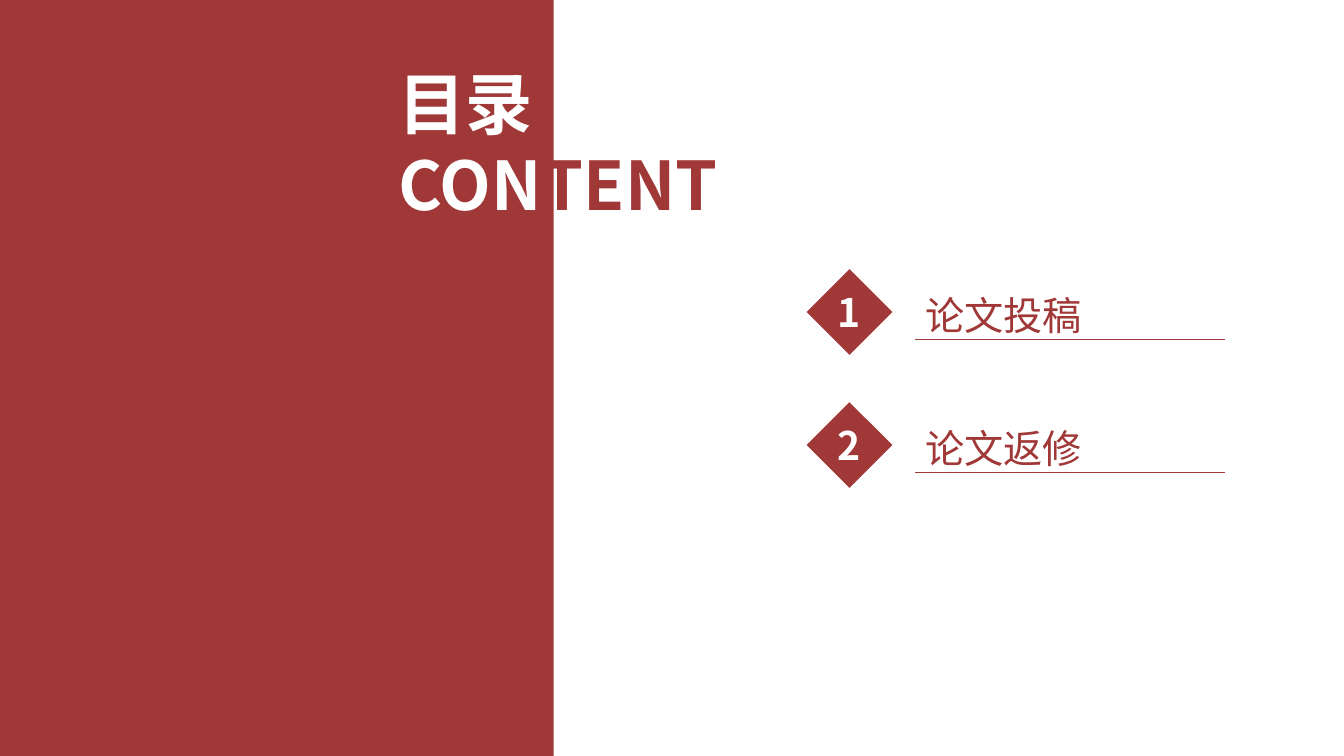
from lxml.etree import SubElement
from pptx import Presentation
from pptx.dml.color import RGBColor
from pptx.enum.shapes import MSO_CONNECTOR as CONNECTOR, MSO_SHAPE as SHAPE
from pptx.enum.text import MSO_ANCHOR as ANCHOR, MSO_AUTO_SIZE as FIT, PP_ALIGN as ALIGN
from pptx.oxml.ns import qn
from pptx.util import Inches, Pt

RED, WHITE = "A13838", "FFFFFF"
HEADING_FONT, BODY_FONT = "Noto Sans CJK SC", "Calibri"
TOPICS = ["论文投稿", "论文返修"]


def color(value):
    """Turn a hex string into a colour."""
    return RGBColor.from_string(value)


def style_run(run, size, font, value, bold=False):
    """Format a run, with a Chinese font beside the Latin one."""
    run.font.size = Pt(size)
    run.font.name = font
    run.font.bold = bold
    run.font.color.rgb = color(value)
    SubElement(run.font._element, qn("a:ea")).set("typeface", HEADING_FONT)


def add_filled(shapes, kind, left, top, width, height):
    """Add a flat red shape without an outline."""
    filled = shapes.add_shape(kind, Inches(left), Inches(top), Inches(width), Inches(height))
    filled.shadow.inherit = False
    filled.fill.solid()
    filled.fill.fore_color.rgb = color(RED)
    filled.line.fill.background()
    return filled


def add_heading(slide, left, top, width, height):
    """Place the two-line title across the edge of the red panel."""
    heading = slide.shapes.title
    heading.left, heading.top = Inches(left), Inches(top)
    heading.width, heading.height = Inches(width), Inches(height)
    frame = heading.text_frame
    frame.word_wrap = False
    frame.auto_size = FIT.SHAPE_TO_FIT_TEXT
    frame.vertical_anchor = ANCHOR.TOP
    lines = [[("目录", WHITE)], [("CON", WHITE), ("TENT", RED)]]
    for index, parts in enumerate(lines):
        line = frame.add_paragraph() if index else frame.paragraphs[0]
        line.alignment = ALIGN.LEFT
        for wording, value in parts:
            run = line.add_run()
            run.text = wording
            style_run(run, 48, HEADING_FONT, value, bold=True)


def add_panel(slide, left, top, width, height):
    """Place the red panel behind the title."""
    panel = add_filled(slide.shapes, SHAPE.RECTANGLE, left, top, width, height)
    slide.shapes.title.element.addprevious(panel.element)


def add_topic(slide, number, topic, left, top, width, height):
    """Group a numbered diamond, its underline and the topic beside it."""
    shapes = slide.shapes.add_group_shape().shapes
    diamond = add_filled(shapes, SHAPE.DIAMOND, left, top, height, height)
    frame = diamond.text_frame
    frame.margin_left = frame.margin_right = 0
    frame.word_wrap = False
    frame.vertical_anchor = ANCHOR.MIDDLE
    frame.text = str(number)
    frame.paragraphs[0].alignment = ALIGN.CENTER
    style_run(frame.paragraphs[0].runs[0], 28, HEADING_FONT, WHITE, bold=True)

    text_left, line_top = left + 1.08, Inches(top + 0.7)
    underline = shapes.add_connector(
        CONNECTOR.STRAIGHT, Inches(text_left), line_top, Inches(left + width), line_top)
    underline.line.color.rgb = color(RED)
    underline.line.width = Pt(0.5)
    SubElement(underline.element.spPr, qn("a:effectLst"))

    label = shapes.add_textbox(Inches(text_left), Inches(top + 0.17), Inches(1.76), Inches(0.57))
    label.text_frame.word_wrap = False
    label.text_frame.auto_size = FIT.SHAPE_TO_FIT_TEXT
    label.text_frame.text = topic
    style_run(label.text_frame.paragraphs[0].runs[0], 28, BODY_FONT, RED)


def add_topics(slide, left, top, width, pitch):
    """Stack the topics at equal steps."""
    for index, topic in enumerate(TOPICS):
        add_topic(slide, index + 1, topic, left, top + index * pitch, width, 0.85)


def main():
    """Build the contents slide."""
    deck = Presentation()
    deck.slide_width, deck.slide_height = Inches(13.33), Inches(7.5)
    slide = deck.slides.add_slide(deck.slide_layouts[5])
    add_heading(slide, 3.85, 0.57, 3.57, 1.72)
    add_panel(slide, 0, 0, 5.49, 7.5)
    add_topics(slide, 8, 2.67, 4.15, 1.32)
    deck.save("out.pptx")


if __name__ == "__main__":
    main()
